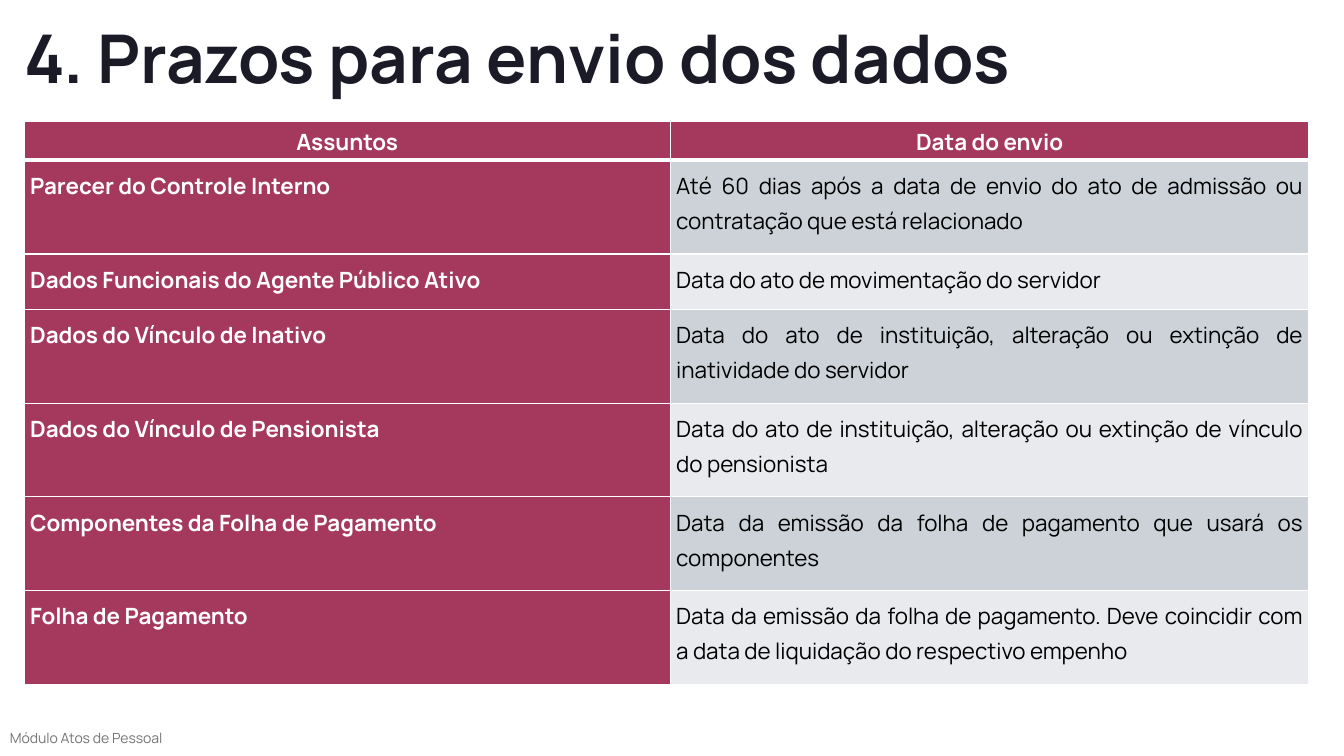
from lxml.etree import SubElement
from pptx import Presentation
from pptx.dml.color import RGBColor
from pptx.enum.text import PP_ALIGN
from pptx.oxml.ns import qn
from pptx.util import Cm, Pt

WHITE, BERRY = "FFFFFF", "A5395D"
BANDS = ["CCD2D8", "E8EAED"]


def color(value):
    return RGBColor.from_string(value)


def write(text_frame, text, size=16, fill=WHITE, bold=False, align=PP_ALIGN.LEFT,
          line_spacing=1.15, space_after=0, inset=0.0, inset_y=None):
    text_frame.word_wrap = True
    paragraph = text_frame.paragraphs[0]
    paragraph.alignment = align
    paragraph.line_spacing = line_spacing
    paragraph.space_after = Pt(space_after)
    run = paragraph.add_run()
    run.text = text
    run.font.name = "Manrope"
    run.font.size = Pt(size)
    run.font.bold = bold
    run.font.color.rgb = color(fill)
    text_frame.margin_left = text_frame.margin_right = Cm(inset)
    text_frame.margin_top = text_frame.margin_bottom = Cm(inset if inset_y is None else inset_y)


presentation = Presentation()
presentation.slide_width, presentation.slide_height = Cm(33.87), Cm(19.05)
slide = presentation.slides.add_slide(presentation.slide_layouts[6])

# Footer and title
footer = slide.shapes.add_textbox(Cm(0), Cm(18.31), Cm(32.39), Cm(0.56))
write(footer.text_frame, "Módulo Atos de Pessoal", size=10, fill="747474",
      line_spacing=0.9, inset=0.25, inset_y=0.13)
title = slide.shapes.add_textbox(Cm(0.61), Cm(0.81), Cm(32.39), Cm(1.65))
write(title.text_frame, "4. Prazos para envio dos dados", size=48, fill="1B1B27",
      bold=True, line_spacing=Pt(46.2))

# Deadlines table
deadlines = [
    ("Assuntos", "Data do envio"),
    ("Parecer do Controle Interno",
     "Até 60 dias após a data de envio do ato de admissão ou contratação que está relacionado"),
    ("Dados Funcionais do Agente Público Ativo",
     "Data do ato de movimentação do servidor"),
    ("Dados do Vínculo de Inativo",
     "Data do ato de instituição, alteração ou extinção de inatividade do servidor"),
    ("Dados do Vínculo de Pensionista",
     "Data do ato de instituição, alteração ou extinção de vínculo do pensionista"),
    ("Componentes da Folha de Pagamento",
     "Data da emissão da folha de pagamento que usará os componentes"),
    ("Folha de Pagamento",
     "Data da emissão da folha de pagamento. Deve coincidir com a data de liquidação "
     "do respectivo empenho"),
]
row_heights = [0.97, 2.36, 1.4] + [2.36] * 4
table = slide.shapes.add_table(len(deadlines), 2, Cm(0.61), Cm(3.07), Cm(32.38),
                               Cm(sum(row_heights))).table
table.columns[0].width, table.columns[1].width = Cm(16.28), Cm(16.1)

for row_index, texts in enumerate(deadlines):
    table.rows[row_index].height = Cm(row_heights[row_index])
    is_header = row_index == 0
    for column_index, text in enumerate(texts):
        cell = table.cell(row_index, column_index)
        is_label = is_header or column_index == 0
        align = PP_ALIGN.LEFT if is_label else PP_ALIGN.JUSTIFY
        write(cell.text_frame, text, fill=WHITE if is_label else "000000", bold=is_label,
              align=PP_ALIGN.CENTER if is_header else align, space_after=8)
        inset = Cm(0 if is_header else 0.15)
        cell.margin_left = cell.margin_right = inset
        cell.margin_top = cell.margin_bottom = inset

        # White borders, heavier below the header
        properties = cell._tc.get_or_add_tcPr()
        widths = {"L": 1, "R": 1, "T": 3 if row_index == 1 else 1, "B": 3 if is_header else 1}
        for side, width in widths.items():
            line = SubElement(properties, qn(f"a:ln{side}"), w=str(Pt(width)))
            SubElement(SubElement(line, qn("a:solidFill")), qn("a:srgbClr"), val=WHITE)
        cell.fill.solid()
        cell.fill.fore_color.rgb = color(BERRY if is_label else BANDS[(row_index - 1) % 2])

presentation.save("out.pptx")
